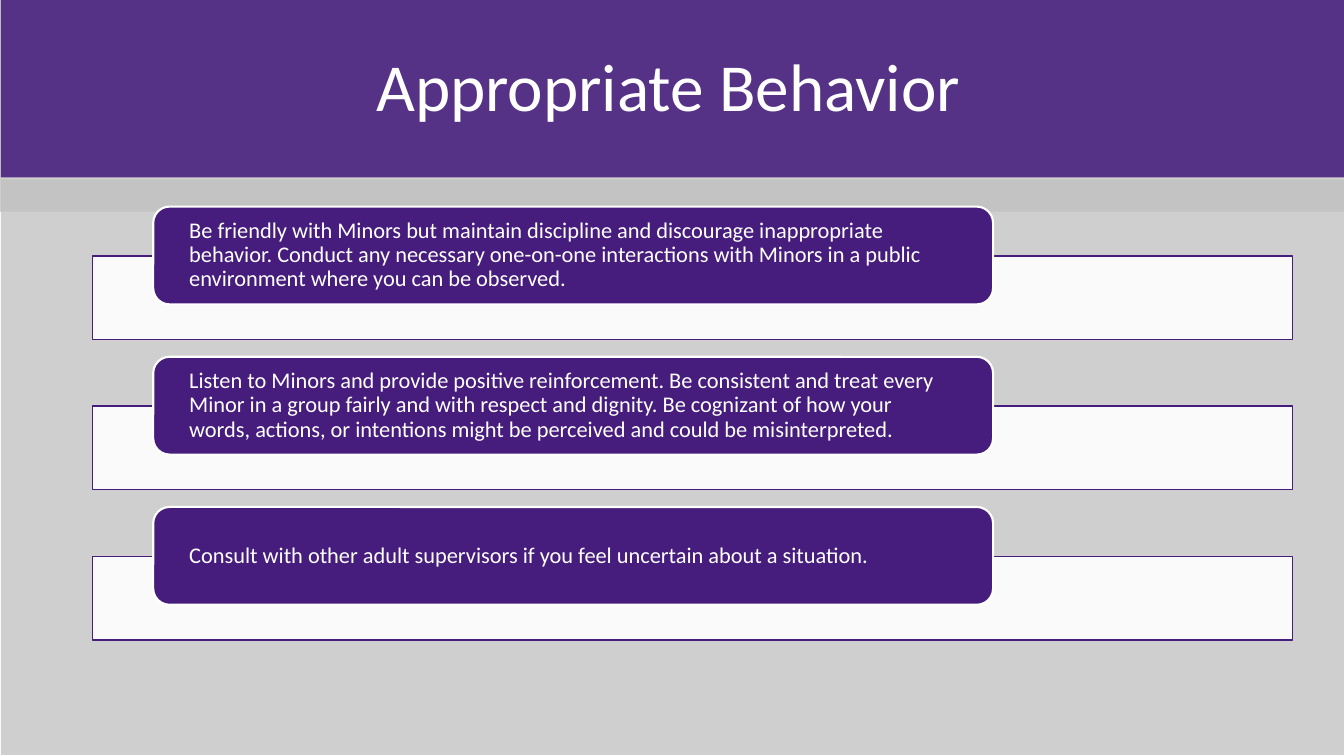
"""Build the Appropriate Behavior slide."""
from dataclasses import dataclass

from lxml.etree import SubElement
from pptx import Presentation
from pptx.dml.color import RGBColor
from pptx.enum.shapes import MSO_SHAPE as Preset
from pptx.enum.text import MSO_ANCHOR as Anchor, MSO_AUTO_SIZE as AutoSize, PP_ALIGN as Align
from pptx.oxml.ns import qn
from pptx.shapes.autoshape import Shape
from pptx.slide import Slide
from pptx.text.text import _Paragraph as Paragraph
from pptx.util import Emu, Pt

EMU_PER_PX = 9144
COLORS = {"purple": "461D7C", "gray": "BFBFBF", "white": "FFFFFF"}
FONT = "Calibri"
FIRST_ROW_TOP = 205
ROW_PITCH = 149


@dataclass(frozen=True)
class Panel:
    """A filled shape, with lengths in px and opacity in percent."""
    left: int
    top: int
    width: int
    height: int
    fill: str
    opacity: int = 100
    line: str = ""
    line_points: float = 0
    preset: Preset = Preset.RECTANGLE


BACKDROPS = [
    Panel(1, 178, 1333, 571, "gray", 75),
    Panel(0, 0, 1334, 210, "gray", 75),
    Panel(1, -2, 1335, 178, "purple", 88),
]
GUIDELINES = [
    "Be friendly with Minors but maintain discipline and discourage inappropriate behavior. "
    "Conduct any necessary one-on-one interactions with Minors in a public environment "
    "where you can be observed.",
    "Listen to Minors and provide positive reinforcement. Be consistent and treat every Minor "
    "in a group fairly and with respect and dignity. Be cognizant of how your words, actions, "
    "or intentions might be perceived and could be misinterpreted.",
    "Consult with other adult supervisors if you feel uncertain about a situation.",
]


def px(length: int) -> Emu:
    """Turn px into EMU."""
    return Emu(length * EMU_PER_PX)


def color(name: str) -> RGBColor:
    """Look up a named colour."""
    return RGBColor.from_string(COLORS[name])


def add_panel(page: Slide, panel: Panel) -> Shape:
    """Draw a panel and return its shape."""
    shape = page.shapes.add_shape(
        panel.preset, px(panel.left), px(panel.top), px(panel.width), px(panel.height))
    shape.shadow.inherit = False
    shape.fill.solid()
    shape.fill.fore_color.rgb = color(panel.fill)
    if panel.opacity < 100:
        tint = shape.fill._xPr.find(".//" + qn("a:srgbClr"))
        SubElement(tint, qn("a:alpha"), val=str(panel.opacity * 1000))
    if panel.line:
        shape.line.color.rgb = color(panel.line)
        shape.line.width = Pt(panel.line_points)
    else:
        shape.line.fill.background()
    return shape


def write(para: Paragraph, text: str, points: int, align: Align) -> None:
    """Fill a paragraph with white text."""
    para.text = text
    para.alignment = align
    para.font.name = FONT
    para.font.size = Pt(points)
    para.font.color.rgb = color("white")


def add_title(page: Slide, text: str) -> None:
    """Draw the slide title."""
    box = page.shapes.add_textbox(px(157), px(39), px(1012), px(91))
    box.text_frame.word_wrap = True
    box.text_frame.auto_size = AutoSize.SHAPE_TO_FIT_TEXT
    write(box.text_frame.paragraphs[0], text, 48, Align.CENTER)


def add_guideline(page: Slide, top: int, text: str) -> None:
    """Draw a guideline label over its white bar."""
    add_panel(page, Panel(92, top + 49, 1190, 83, "white", 90, "purple", 1))
    label = add_panel(page, Panel(
        152, top, 833, 97, "purple", line="white", line_points=1.5,
        preset=Preset.ROUNDED_RECTANGLE))
    frame = label.text_frame
    frame.word_wrap = True
    frame.vertical_anchor = Anchor.MIDDLE
    frame.margin_left = frame.margin_right = px(31)
    frame.margin_top = frame.margin_bottom = 0
    para = frame.paragraphs[0]
    write(para, text, 16, Align.LEFT)
    para.line_spacing = 0.9


def main() -> None:
    """Build and save the deck."""
    deck = Presentation()
    deck.slide_width, deck.slide_height = px(1333), px(750)
    page = deck.slides.add_slide(deck.slide_layouts[6])
    for backdrop in BACKDROPS:
        add_panel(page, backdrop)
    add_title(page, "Appropriate Behavior")
    for row, text in enumerate(GUIDELINES):
        add_guideline(page, FIRST_ROW_TOP + row * ROW_PITCH, text)
    deck.save("out.pptx")


if __name__ == "__main__":
    main()
